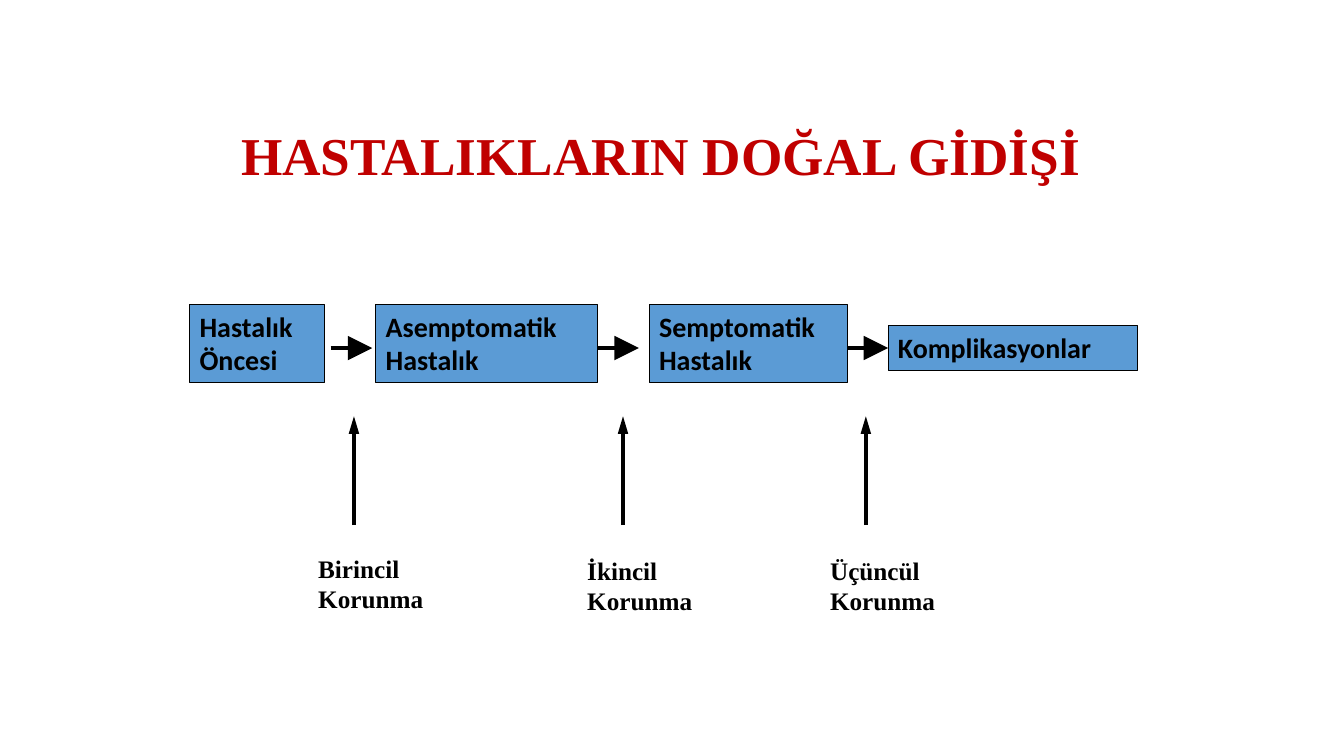
import pptx
import pptx.util
import pptx.dml.color
import pptx.enum.shapes
import pptx.enum.text
import pptx.oxml
import pptx.oxml.ns

Cm, Pt = pptx.util.Cm, pptx.util.Pt
COLORS = {"title": "C00000", "stage": "5B9BD5", "ink": "000000"}


def write(frame, lines, font_name, size, color):
    """Put bold, left-aligned lines into a text frame as one paragraph."""
    frame.word_wrap = True
    paragraph = frame.paragraphs[0]
    paragraph.alignment = pptx.enum.text.PP_ALIGN.LEFT
    for index, line in enumerate(lines):
        if index:
            paragraph.add_line_break()
        run = paragraph.add_run()
        run.text = line
        run.font.name = font_name
        run.font.size = Pt(size)
        run.font.bold = True
        run.font.color.rgb = pptx.dml.color.RGBColor.from_string(COLORS[color])


def add_arrow(slide, start, end, weight, head_width):
    arrow = slide.shapes.add_connector(
        pptx.enum.shapes.MSO_CONNECTOR.STRAIGHT,
        *(Cm(value) for value in start + end))
    arrow.line.width = Pt(weight)
    arrow.line.color.rgb = pptx.dml.color.RGBColor.from_string(COLORS["ink"])
    head = pptx.oxml.parse_xml(
        f'<a:tailEnd {pptx.oxml.ns.nsdecls("a")} type="triangle" w="{head_width}" len="lg"/>')
    arrow.line._get_or_add_ln().append(head)
    arrow._element.spPr.append(
        pptx.oxml.parse_xml(f'<a:effectLst {pptx.oxml.ns.nsdecls("a")}/>'))
    return arrow


deck = pptx.Presentation()
deck.slide_width, deck.slide_height = Cm(33.87), Cm(19.05)
slide = deck.slides.add_slide(deck.slide_layouts[5])

title = slide.shapes.title
title.left, title.top, title.width, title.height = Cm(5.82), Cm(2.41), Cm(22.86), Cm(3.18)
title.text_frame.vertical_anchor = pptx.enum.text.MSO_ANCHOR.MIDDLE
write(title.text_frame, ["HASTALIKLARIN DOĞAL GİDİŞİ"], "Times New Roman", 38, "title")
title.text_frame.paragraphs[0].line_spacing = 0.9

# Stages of the disease: lines, left, top, width, height
stages = [
    (["Hastalık ", "Öncesi"], 4.78, 7.67, 3.4, 1.98),
    (["Asemptomatik Hastalık"], 9.47, 7.67, 5.6, 1.98),
    (["Semptomatik Hastalık"], 16.36, 7.67, 5.0, 1.98),
    (["Komplikasyonlar"], 22.38, 8.2, 6.3, 1.14),
]
for lines, left, top, width, height in stages:
    stage = slide.shapes.add_shape(
        pptx.enum.shapes.MSO_SHAPE.RECTANGLE, Cm(left), Cm(top), Cm(width), Cm(height))
    stage.shadow.inherit = False
    stage.fill.solid()
    stage.fill.fore_color.rgb = pptx.dml.color.RGBColor.from_string(COLORS["stage"])
    stage.line.color.rgb = pptx.dml.color.RGBColor.from_string(COLORS["ink"])
    stage.line.width = Pt(0.75)
    stage.text_frame.vertical_anchor = pptx.enum.text.MSO_ANCHOR.TOP
    write(stage.text_frame, lines, "Calibri", 20, "ink")

# Progress from one stage to the next
progress_y = 8.77
for start_x, end_x in [(8.33, 9.38), (15.04, 16.1), (21.34, 22.38)]:
    progress = add_arrow(slide, (start_x, progress_y), (end_x, progress_y), 3.5, "lg")
progress.end_connect(stage, 1)

# Levels of prevention, each pointing up at a transition
preventions = [("Birincil ", 8.92, 13.82), ("İkincil ", 15.7, 13.87), ("Üçüncül ", 21.82, 13.87)]
for level, x, top in preventions:
    add_arrow(slide, (x, 13.23), (x, 10.49), 2.5, "med")
    prevention = slide.shapes.add_textbox(Cm(x - 1.15), Cm(top), Cm(4.24), Cm(1.8))
    write(prevention.text_frame, [level, "Korunma"], "Times New Roman", 18, "ink")

deck.save("out.pptx")
